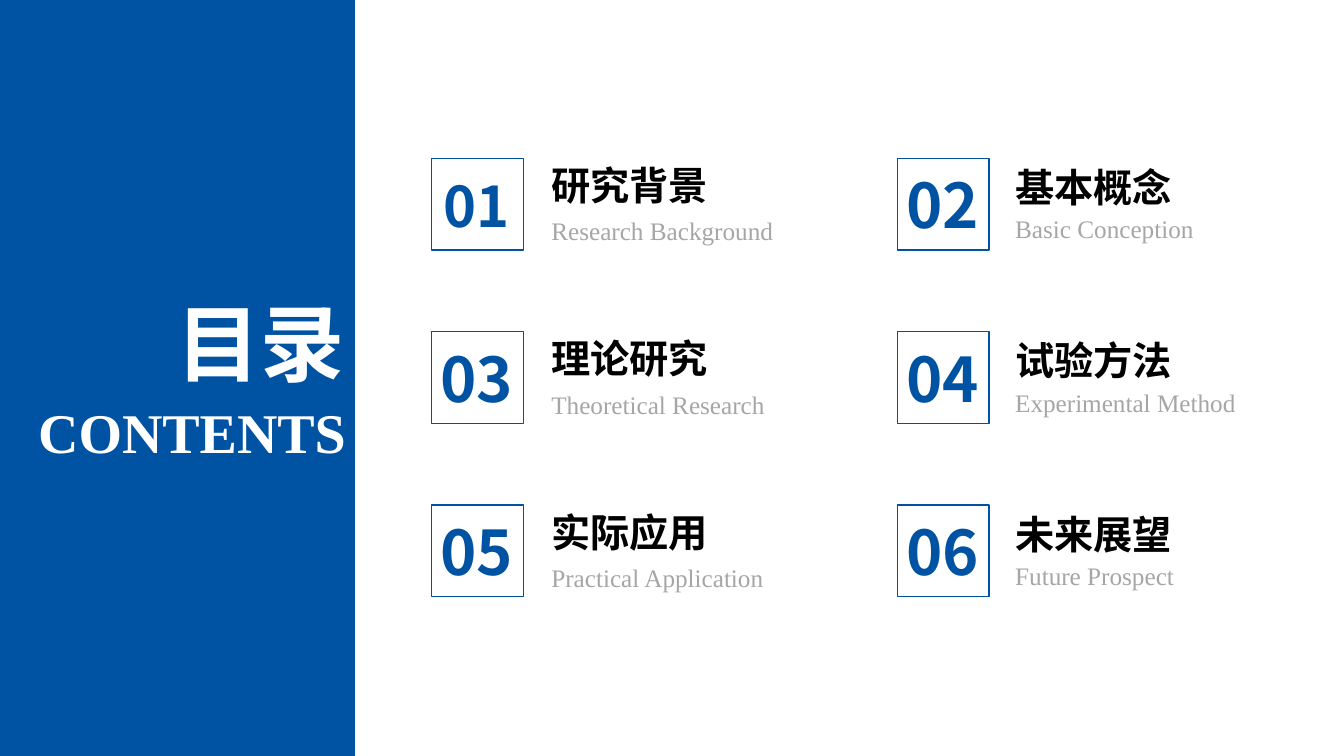
from pptx import Presentation
from pptx.dml.color import RGBColor
from pptx.enum.shapes import MSO_SHAPE
from pptx.enum.text import MSO_ANCHOR, MSO_AUTO_SIZE, PP_ALIGN
from pptx.oxml.ns import qn
from pptx.util import Inches, Pt
from lxml import etree

BLUE, WHITE, BLACK, GRAY = "0053A3", "FFFFFF", "000000", "A6A6A6"
SANS, SERIF = "Noto Sans CJK SC", "Times New Roman"


def color(code):
    return RGBColor.from_string(code)


def write(box, at, text, size, font, tint, bold=True, align=PP_ALIGN.LEFT):
    box.left, box.top, box.width, box.height = map(Inches, at)
    frame = box.text_frame
    frame.word_wrap = True
    frame.auto_size = MSO_AUTO_SIZE.SHAPE_TO_FIT_TEXT
    frame.vertical_anchor = MSO_ANCHOR.TOP
    para = frame.paragraphs[0]
    para.alignment = align
    run = para.add_run()
    run.text = text
    run.font.size = Pt(size)
    run.font.name = font
    run.font.bold = bold
    run.font.color.rgb = color(tint)
    # Chinese glyphs take the East Asian font
    east = etree.SubElement(run.font._element, qn("a:ea"))
    east.set("typeface", font)


deck = Presentation()
deck.slide_width, deck.slide_height = Inches(13.33), Inches(7.5)
slide = deck.slides.add_slide(deck.slide_layouts[5])
shapes = slide.shapes

# Blue side panel, placed behind the title
panel = shapes.add_shape(MSO_SHAPE.RECTANGLE, 0, 0, Inches(3.52), Inches(7.5))
panel.shadow.inherit = False
panel.fill.solid()
panel.fill.fore_color.rgb = color(BLUE)
panel.line.fill.background()
title = shapes.title
title._element.addprevious(panel._element)

# Title and its English line
write(title, (0.98, 2.84, 2.54, 1.11), "目录", 60, SANS, WHITE, align=PP_ALIGN.RIGHT)
write(shapes.add_textbox(0, 0, 0, 0), (0, 3.89, 3.53, 0.77),
      "CONTENTS", 40, SERIF, WHITE, align=PP_ALIGN.RIGHT)

# Six topics, in reading order
topics = [
    ("研究背景", "Research Background"),
    ("基本概念", "Basic Conception"),
    ("理论研究", "Theoretical Research"),
    ("试验方法", "Experimental Method"),
    ("实际应用", "Practical Application"),
    ("未来展望", "Future Prospect"),
]
# Per column: square left, text left, heading and subtitle offsets
columns = [(4.28, 5.37, -0.02, 0.52), (8.9, 9.97, 0, 0.5)]
side = 0.91

for i, (head, sub) in enumerate(topics):
    row, col = divmod(i, 2)
    left, text_x, head_y, sub_y = columns[col]
    top = 1.57 + 1.72 * row

    write(shapes.add_textbox(0, 0, 0, 0), (text_x, top + head_y, 2.62, 0.57),
          head, 28, SANS, BLACK)
    write(shapes.add_textbox(0, 0, 0, 0), (text_x, top + sub_y, 2.62, 0.4),
          sub, 18, SERIF, GRAY, bold=False)

    # The first number is slightly smaller
    size, drop = (40, 0.08) if i == 0 else (44, 0.04)
    write(shapes.add_textbox(0, 0, 0, 0), (left - 0.04, top + drop, 0.98, 0.84),
          f"{i + 1:02}", size, SANS, BLUE, align=PP_ALIGN.CENTER)

    # Outlined square around the number
    square = shapes.add_shape(MSO_SHAPE.RECTANGLE, Inches(left), Inches(top),
                              Inches(side), Inches(side))
    square.shadow.inherit = False
    square.fill.background()
    square.line.color.rgb = color(BLUE)
    square.line.width = Pt(1)

deck.save("out.pptx")
